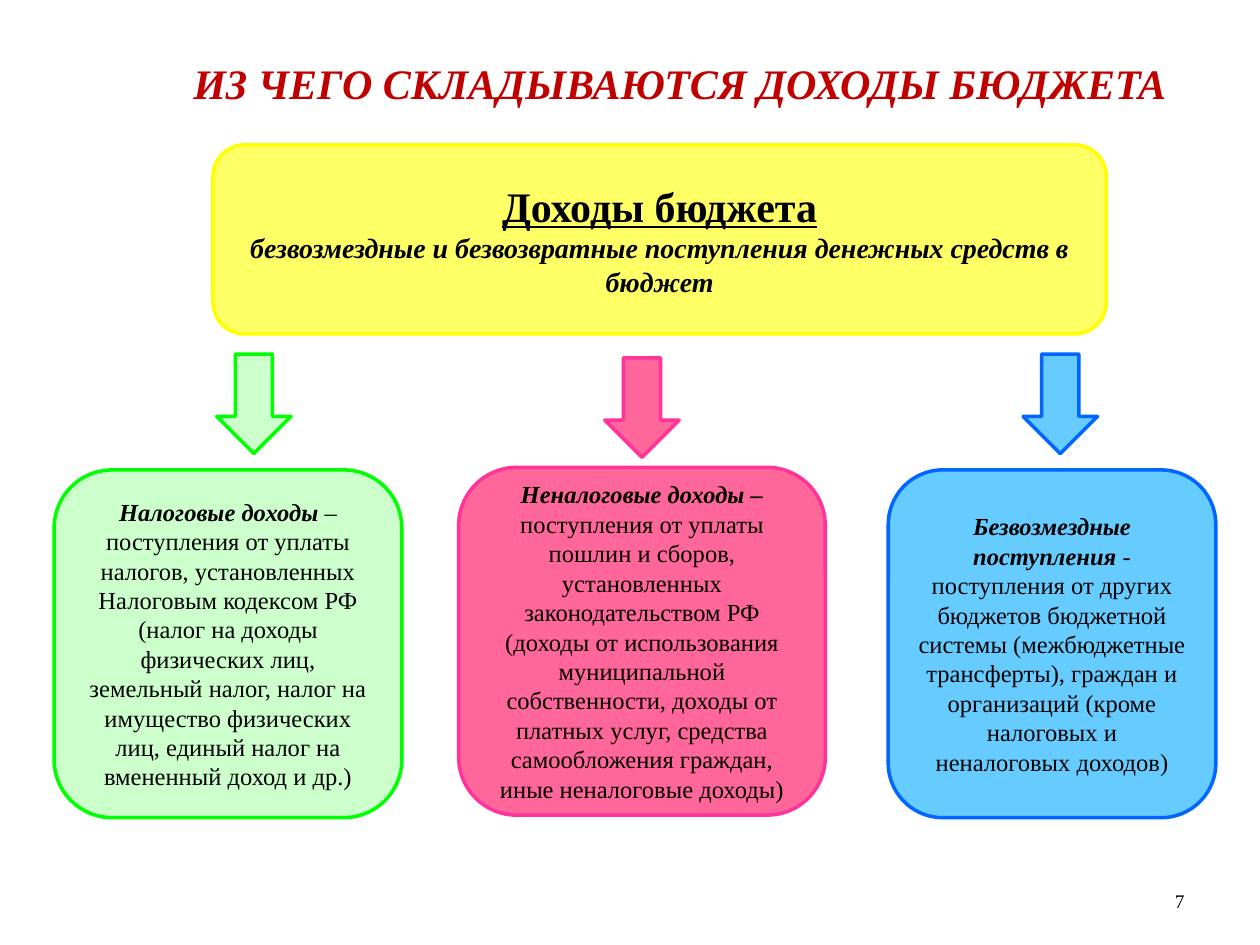
import pptx
import pptx.util
import pptx.dml.color
import pptx.enum.shapes
import pptx.enum.text

Inches = pptx.util.Inches
RGBColor = pptx.dml.color.RGBColor
MSO_SHAPE = pptx.enum.shapes.MSO_SHAPE
PP_ALIGN = pptx.enum.text.PP_ALIGN
MSO_ANCHOR = pptx.enum.text.MSO_ANCHOR

BLACK = RGBColor(0x00, 0x00, 0x00)
RED = RGBColor(0xC0, 0x00, 0x00)
YELLOW = RGBColor(0xFF, 0xFF, 0x66)
YELLOW_LINE = RGBColor(0xFF, 0xFF, 0x00)
GREEN = RGBColor(0xCC, 0xFF, 0xCC)
GREEN_LINE = RGBColor(0x00, 0xFF, 0x00)
PINK = RGBColor(0xFF, 0x66, 0x99)
PINK_LINE = RGBColor(0xFF, 0x33, 0x99)
BLUE = RGBColor(0x66, 0xCC, 0xFF)
BLUE_LINE = RGBColor(0x00, 0x66, 0xFF)


def add_text(p, text, size=14, color=BLACK, bold=False, italic=False,
             underline=False, align=PP_ALIGN.CENTER):
    p.alignment = align
    r = p.add_run()
    r.text = text
    r.font.name = "Times New Roman"
    r.font.size = pptx.util.Pt(size)
    r.font.color.rgb = color
    r.font.bold = bold
    r.font.italic = italic
    r.font.underline = underline


def add_block(kind, left, top, width, height, fill, line):
    """Add a filled, outlined preset shape and return its text frame."""
    sp = s.shapes.add_shape(kind, Inches(left), Inches(top), Inches(width), Inches(height))
    sp.shadow.inherit = False
    sp.fill.solid()
    sp.fill.fore_color.rgb = fill
    sp.line.color.rgb = line
    sp.line.width = pptx.util.Pt(2)
    tf = sp.text_frame
    tf.word_wrap = True
    tf.vertical_anchor = MSO_ANCHOR.MIDDLE
    return tf


prs = pptx.Presentation()
prs.slide_width = Inches(10)
prs.slide_height = Inches(7.5)
s = prs.slides.add_slide(prs.slide_layouts[6])

# Definition of budget income
tf = add_block(MSO_SHAPE.ROUNDED_RECTANGLE, 1.69, 1.15, 7.09, 1.5, YELLOW, YELLOW_LINE)
add_text(tf.paragraphs[0], "Доходы бюджета", size=24, bold=True, underline=True)
add_text(tf.add_paragraph(),
         "безвозмездные и безвозвратные поступления денежных средств в бюджет",
         size=16, bold=True, italic=True)

# Income types: box left, top, width; arrow left, top; colours; term, explanation
income_types = [
    (0.43, 3.73, 2.76, 1.72, 2.81, GREEN, GREEN_LINE, "Налоговые доходы",
     " – поступления от уплаты налогов, установленных Налоговым кодексом РФ "
     "(налог на доходы физических лиц, земельный налог, налог на имущество "
     "физических лиц, единый налог на вмененный доход и др.)"),
    (3.64, 3.71, 2.91, 4.8, 2.84, PINK, PINK_LINE, "Неналоговые доходы –",
     " поступления от уплаты пошлин и сборов, установленных законодательством РФ "
     "(доходы от использования муниципальной собственности, доходы от платных "
     "услуг, средства самообложения граждан, иные неналоговые доходы)"),
    (7.05, 3.73, 2.6, 8.12, 2.81, BLUE, BLUE_LINE, "Безвозмездные поступления ",
     "- поступления от других бюджетов бюджетной системы (межбюджетные "
     "трансферты), граждан и организаций (кроме налоговых и неналоговых доходов)"),
]
for left, top, width, arrow_left, arrow_top, fill, line, term, explanation in income_types:
    tf = add_block(MSO_SHAPE.ROUNDED_RECTANGLE, left, top, width, 2.76, fill, line)
    add_text(tf.paragraphs[0], term, bold=True, italic=True)
    add_text(tf.paragraphs[0], explanation)
    add_block(MSO_SHAPE.DOWN_ARROW, arrow_left, arrow_top, 0.59, 0.79, fill, line)

# Page number
tf = s.shapes.add_textbox(Inches(7.17), Inches(6.95), Inches(2.33), Inches(0.4)).text_frame
tf.word_wrap = True
tf.vertical_anchor = MSO_ANCHOR.MIDDLE
add_text(tf.paragraphs[0], "7", size=11, align=PP_ALIGN.RIGHT)

# Title
tf = s.shapes.add_textbox(Inches(1.14), Inches(0.41), Inches(8.51), Inches(0.51)).text_frame
tf.word_wrap = True
tf.auto_size = pptx.enum.text.MSO_AUTO_SIZE.SHAPE_TO_FIT_TEXT
add_text(tf.paragraphs[0], "ИЗ ЧЕГО СКЛАДЫВАЮТСЯ ДОХОДЫ БЮДЖЕТА",
         size=24, color=RED, bold=True, italic=True)

prs.save("out.pptx")
